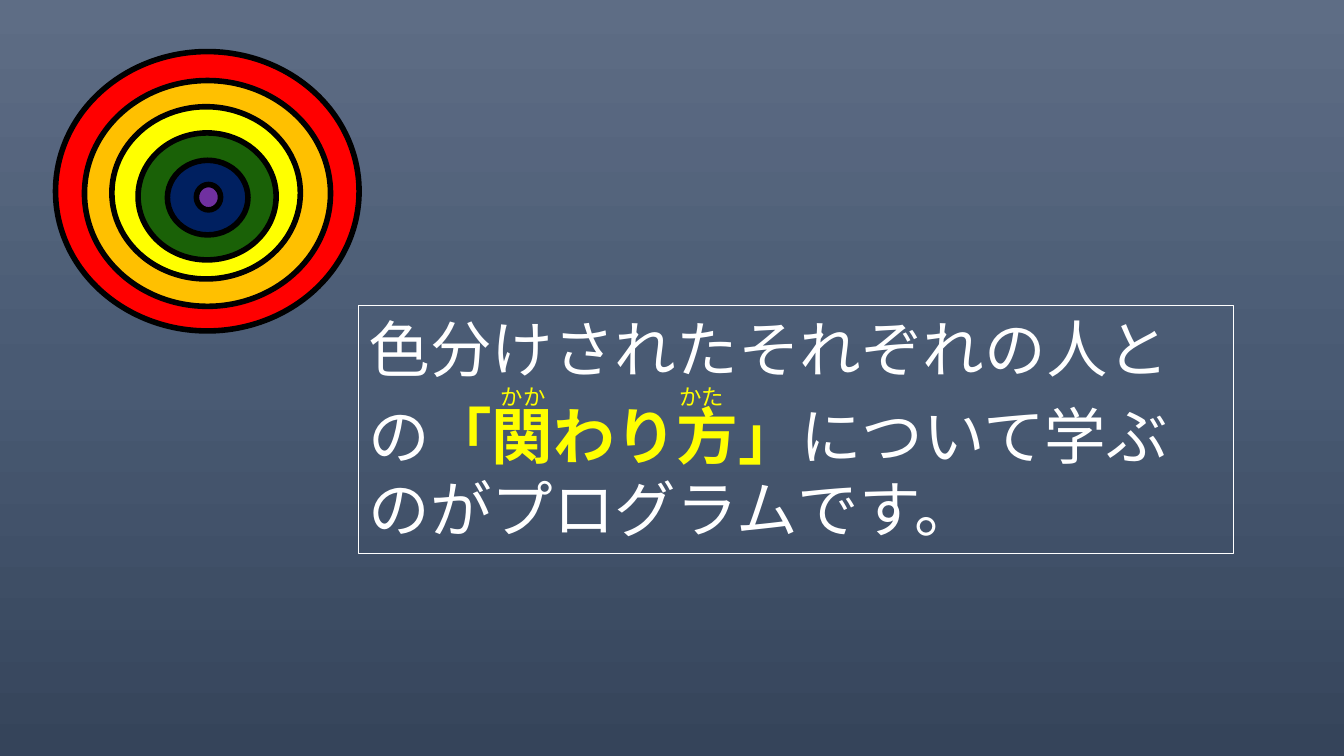
from copy import deepcopy
from dataclasses import dataclass

from lxml.etree import SubElement
from pptx import Presentation
from pptx.dml.color import RGBColor as Rgb
from pptx.enum.shapes import MSO_SHAPE as Shape
from pptx.enum.text import MSO_ANCHOR as Anchor, PP_ALIGN as Align
from pptx.oxml.ns import qn
from pptx.util import Cm, Pt


@dataclass(frozen=True)
class Theme:
    """Colours, type sizes and line widths of the slide."""
    font: str = "Noto Sans CJK JP"
    text: str = "FFFFFF"
    accent: str = "FFFF00"
    outline: str = "000000"
    backdrop: tuple = ((0, "5E6D85"), (50, "495A73"), (100, "35445A"))
    rings: tuple = ("FF0000", "FFC000", "FFFF00", "1A6107", "002060", "7030A0")
    body_size: float = 44
    body_line: float = 52
    ruby_size: float = 16
    ruby_line: float = 19
    ring_width: float = 4
    frame_width: float = 0.75


THEME = Theme()
RING_BOUNDS = (
    (1.4, 1.3, 7.65, 7.04),
    (2.13, 2.03, 6.2, 5.69),
    (2.82, 2.69, 4.75, 4.34),
    (3.48, 3.35, 3.48, 3.2),
    (4.22, 4.04, 2.03, 1.88),
    (4.95, 4.65, 0.61, 0.64),
)
STATEMENT = (
    (("色分けされたそれぞれの人と", False),),
    (("の", False), ("「関わり方」", True), ("について学ぶのがプログラムです。", False)),
)


def apply(target, values):
    """Set each attribute named in values on the target."""
    for name, value in values.items():
        setattr(target, name, value)


def paint_background(page):
    """Fill the page with the vertical gradient."""
    fill = page.background.fill
    fill.gradient()
    fill.gradient_angle = 270
    stops = page.element.find(".//" + qn("a:gsLst"))
    stops.append(deepcopy(stops[-1]))
    for stop, (position, colour) in zip(fill.gradient_stops, THEME.backdrop):
        stop.position = position / 100
        stop.color.rgb = Rgb.from_string(colour)


def add_outlined(shapes, kind, bounds, line, width, fill=None):
    """Add a shape with an outline and an optional solid fill."""
    shape = shapes.add_shape(kind, *map(Cm, bounds))
    shape.shadow.inherit = False
    if fill:
        shape.fill.solid()
        shape.fill.fore_color.rgb = Rgb.from_string(fill)
    else:
        shape.fill.background()
    shape.line.color.rgb = Rgb.from_string(line)
    shape.line.width = Pt(width)
    return shape


def add_rings(page):
    """Add the nested coloured rings as one group."""
    group = page.shapes.add_group_shape()
    for bounds, colour in zip(RING_BOUNDS, THEME.rings):
        add_outlined(group.shapes, Shape.OVAL, bounds, THEME.outline, THEME.ring_width, colour)


def set_frame(box, top):
    """Give a text frame its wrapping, anchor and insets."""
    apply(box.text_frame, {
        "word_wrap": True, "vertical_anchor": Anchor.TOP,
        "margin_left": Cm(0.25), "margin_right": Cm(0.25),
        "margin_top": Cm(top), "margin_bottom": Cm(0),
    })


def add_span(para, text, size, colour, bold=False):
    """Append a formatted run in the slide font."""
    span = para.add_run()
    span.text = text
    apply(span.font, {"name": THEME.font, "size": Pt(size), "bold": bold})
    span.font.color.rgb = Rgb.from_string(colour)
    SubElement(span.font._element, qn("a:ea"), typeface=THEME.font)


def add_statement(page):
    """Add the framed sentence with its highlighted words."""
    box = add_outlined(page.shapes, Shape.RECTANGLE, (9.04, 7.7, 22.05, 6.25),
                       THEME.text, THEME.frame_width)
    set_frame(box, 0.17)
    frame = box.text_frame
    for index, spans in enumerate(STATEMENT):
        para = frame.add_paragraph() if index else frame.paragraphs[0]
        apply(para, {"alignment": Align.LEFT, "line_spacing": Pt(THEME.body_line),
                     "space_before": Pt(10 * index)})
        for text, strong in spans:
            colour = THEME.accent if strong else THEME.text
            add_span(para, text, THEME.body_size, colour, strong)


def add_ruby(page):
    """Add the readings above the highlighted words, spaced by a tab stop."""
    box = page.shapes.add_textbox(*map(Cm, (12.37, 9.53, 8.43, 0.94)))
    set_frame(box, 0.12)
    para = box.text_frame.paragraphs[0]
    para.line_spacing = Pt(THEME.ruby_line)
    tabs = SubElement(para._p.get_or_add_pPr(), qn("a:tabLst"))
    SubElement(tabs, qn("a:tab"), pos=str(Cm(4.5)), algn="l")
    add_span(para, "かか\tかた", THEME.ruby_size, THEME.accent)


def main():
    """Build the slide and save the deck."""
    deck = Presentation()
    apply(deck, {"slide_width": Cm(33.87), "slide_height": Cm(19.05)})
    page = deck.slides.add_slide(deck.slide_layouts[6])
    paint_background(page)
    add_rings(page)
    add_statement(page)
    add_ruby(page)
    deck.save("out.pptx")


if __name__ == "__main__":
    main()
